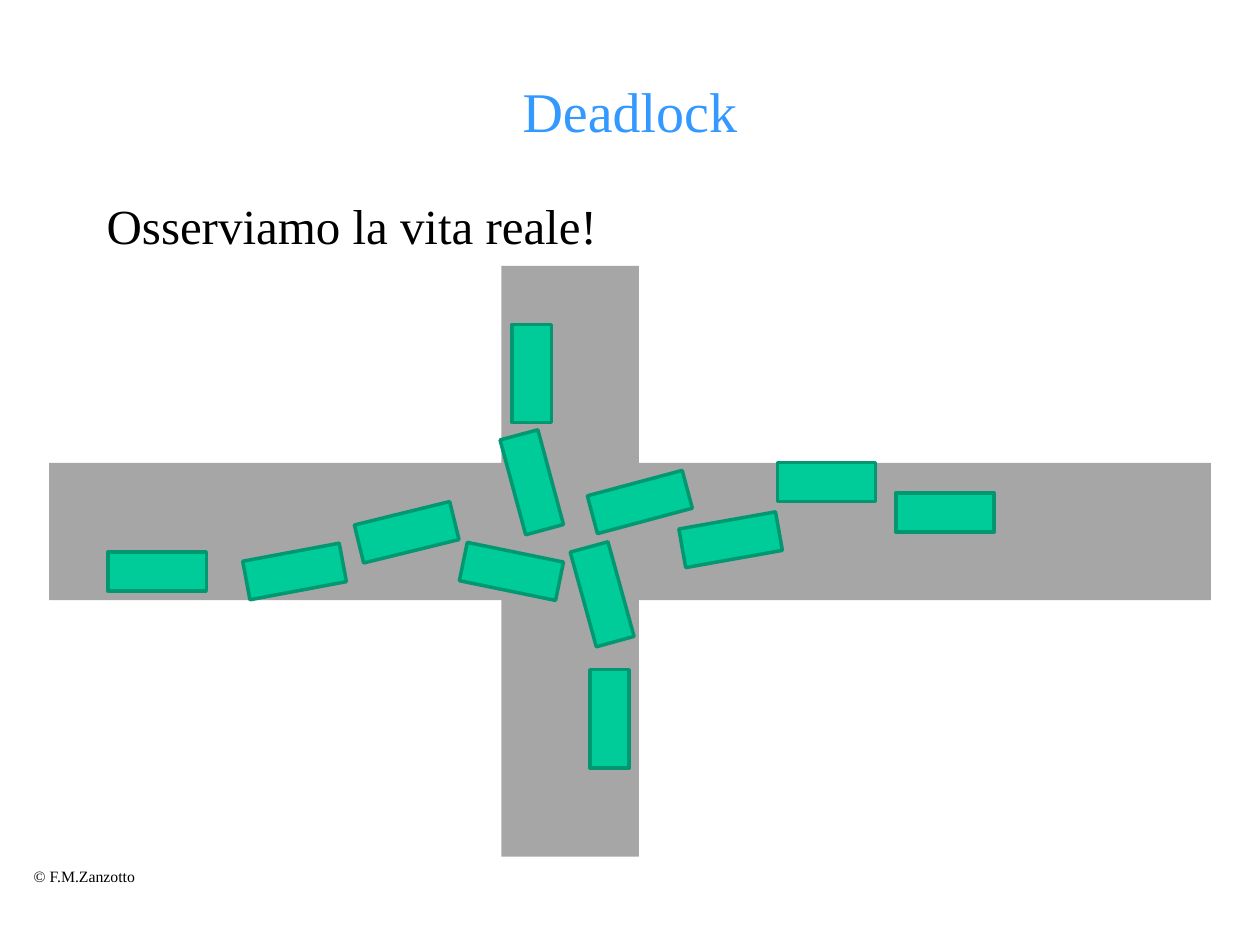
from pptx import Presentation
from pptx.dml.color import RGBColor
from pptx.enum.shapes import MSO_SHAPE
from pptx.enum.text import MSO_ANCHOR, PP_ALIGN
from pptx.util import Cm, Pt

RECT = MSO_SHAPE.RECTANGLE
MIDDLE, TOP = MSO_ANCHOR.MIDDLE, MSO_ANCHOR.TOP
LEFT, CENTER = PP_ALIGN.LEFT, PP_ALIGN.CENTER

FONT = "Times New Roman"
ROAD_WIDTH = 2.77
CAR_LENGTH, CAR_WIDTH = 1.98, 0.79

# Centre of each car within the crossing (cm) and its rotation
CARS = [
    (9.32, 6.16, 11.6),
    (11.91, 4.76, 345),
    (9.73, 4.36, 254.9),
    (11.15, 6.62, 254.6),
    (9.73, 2.17, 270),
    (11.3, 9.13, 270),
    (13.74, 5.52, 349.9),
    (15.67, 4.36, 0),
    (18.06, 4.97, 0),
    (7.21, 5.37, 346.2),
    (4.95, 6.16, 349.4),
    (2.18, 6.16, 0),
]


def color(value):
    return RGBColor.from_string(value)


def set_text(sp, text, size, fill, align=LEFT, anchor=TOP, wrap=True):
    tf = sp.text_frame
    tf.word_wrap = wrap
    tf.vertical_anchor = anchor
    p = tf.paragraphs[0]
    p.text = text
    p.alignment = align
    p.font.name = FONT
    p.font.size = Pt(size)
    p.font.color.rgb = color(fill)


def add_rect(s, left, top, width, height, fill, line=None):
    sp = s.shapes.add_shape(RECT, Cm(left), Cm(top), Cm(width), Cm(height))
    sp.shadow.inherit = False
    sp.fill.solid()
    sp.fill.fore_color.rgb = color(fill)
    if line:
        sp.line.color.rgb = color(line)
        sp.line.width = Pt(2)
    else:
        sp.line.fill.background()
    return sp


def add_title(s, left, top, width, height):
    title = s.shapes.title
    title.left, title.top = Cm(left), Cm(top)
    title.width, title.height = Cm(width), Cm(height)
    set_text(title, "Deadlock", 32, "3399FF", CENTER, MIDDLE)


def add_label(s, text, size, left, top, width, height, wrap=True):
    sp = s.shapes.add_textbox(Cm(left), Cm(top), Cm(width), Cm(height))
    set_text(sp, text, size, "000000", wrap=wrap)


def add_crossing(s, left, top, width, height):
    # Roads
    add_rect(s, left + 9.12, top, ROAD_WIDTH, height, "A6A6A6")
    add_rect(s, left, top + 3.97, width, ROAD_WIDTH, "A6A6A6")
    # Cars
    for x, y, angle in CARS:
        car = add_rect(s, left + x - CAR_LENGTH / 2, top + y - CAR_WIDTH / 2,
                       CAR_LENGTH, CAR_WIDTH, "00CC99", "009771")
        car.rotation = angle


def main():
    prs = Presentation()
    prs.slide_width, prs.slide_height = Cm(25.4), Cm(19.05)
    s = prs.slides.add_slide(prs.slide_layouts[5])
    add_title(s, 1.9, 1.27, 21.6, 1.9)
    add_label(s, "Osserviamo la vita reale!", 28, 1.9, 3.81, 21.6, 1.4)
    add_crossing(s, 0.99, 5.36, 23.42, 11.91)
    add_label(s, "© F.M.Zanzotto", 9, 0.43, 17.35, 2.59, 0.64, wrap=False)
    prs.save("out.pptx")


if __name__ == "__main__":
    main()
